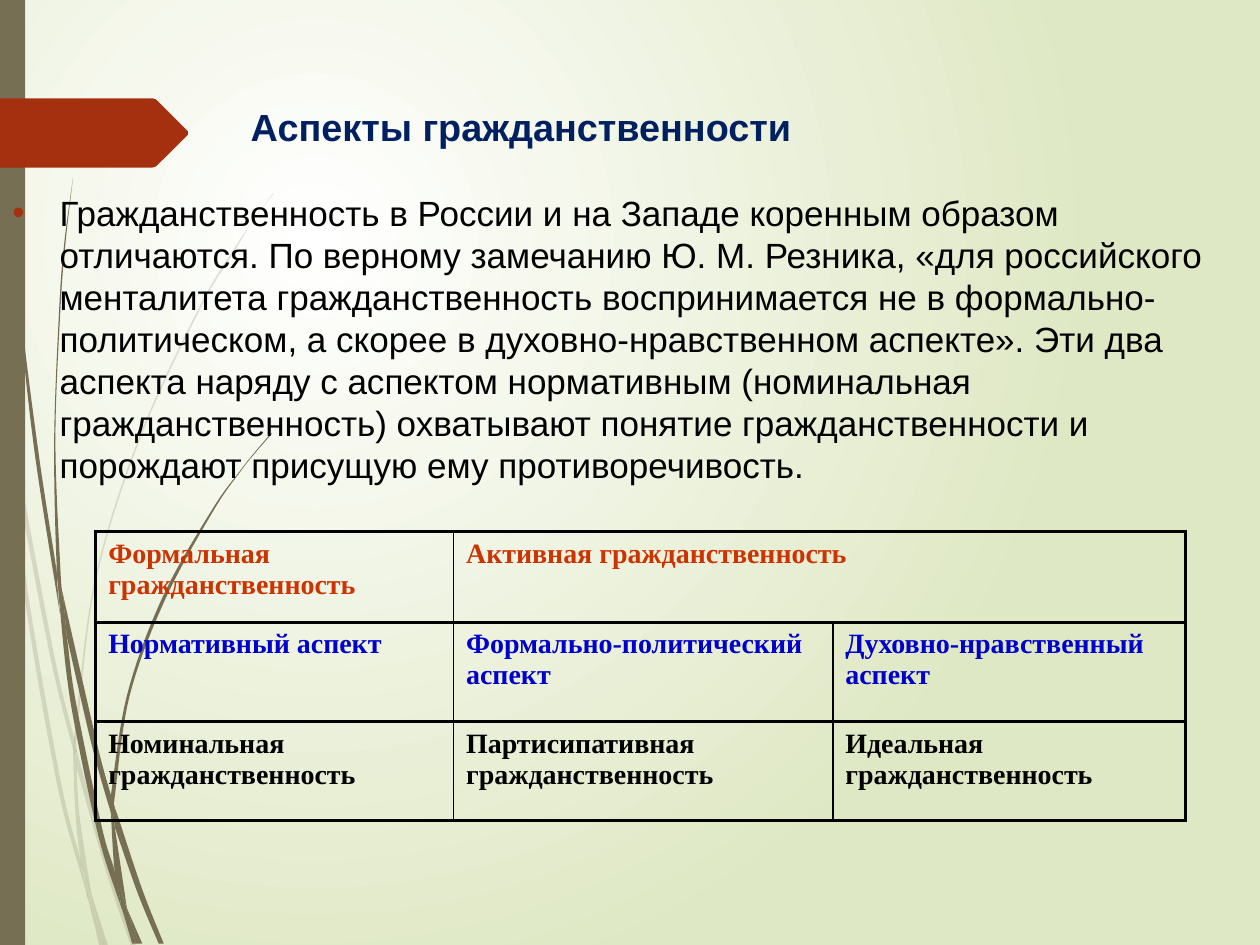
from dataclasses import dataclass

from lxml import etree
from pptx import Presentation, util as u
from pptx.dml.color import RGBColor
from pptx.enum import shapes, text
from pptx.oxml.ns import qn


@dataclass(frozen=True)
class Theme:
    stem: str = "766F54"
    accent: str = "A53010"
    light: str = "FFFFFF"
    shade: str = "DFE8C4"
    title: str = "002060"
    ink: str = "000000"
    red: str = "CC3300"
    blue: str = "0000CC"
    sans: str = "Arial"
    serif: str = "Times New Roman"
    title_size: float = 21.6
    body_size: float = 20
    cell_size: float = 16


THEME = Theme()


def write(frame, words, size, color, font, bold=False, align=None):
    frame.word_wrap = True
    for i, line in enumerate(words.split("\n")):
        paragraph = frame.add_paragraph() if i else frame.paragraphs[0]
        paragraph.alignment = align
        run = paragraph.add_run()
        run.text = line
        run.font.size = u.Pt(size)
        run.font.name = font
        run.font.bold = bold
        run.font.color.rgb = RGBColor.from_string(color)


def smooth(edge):
    """Points of one edge, with two Bezier handles between each pair."""
    padded = [edge[0], *edge, edge[-1]]
    curve = [edge[0]]
    for a, b, c, d in zip(padded, padded[1:], padded[2:], padded[3:]):
        curve.append(tuple(q + (r - p) / 6 for p, q, r in zip(a, b, c)))
        curve.append(tuple(r - (s - q) / 6 for q, r, s in zip(b, c, d)))
        curve.append(c)
    return curve


prs = Presentation()
prs.slide_width, prs.slide_height = u.Inches(10), u.Inches(7.5)
slide = prs.slides.add_slide(prs.slide_layouts[6])

# Background: light spot in the upper left
backdrop = slide.background.fill
backdrop.gradient()
for stop, color, position in zip(backdrop.gradient_stops, (THEME.light, THEME.shade), (0, 1)):
    stop.color.rgb = RGBColor.from_string(color)
    stop.position = position
gradient = slide._element.find(".//" + qn("a:gradFill"))
gradient.remove(gradient.find(qn("a:lin")))
glow = etree.SubElement(gradient, qn("a:path"), path="circle")
etree.SubElement(glow, qn("a:fillToRect"), l="50000", t="50000", r="100000", b="100000")

# Grass blades: each is one edge going out and one coming back
pale_blades = [
    ([(0.08, 3.5), (0.06, 3.22), (0, 2.82)], [(0, 2.99), (0.07, 3.44), (0.08, 3.5)]),
    ([(0.1, 3.45), (0.43, 5.2), (0.59, 5.86)], [(0.59, 5.99), (0.4, 5.22), (0.12, 3.76)]),
    ([(0.61, 5.96), (0.64, 6.07), (0.88, 6.92), (1.08, 7.51)], [(1.04, 7.51), (0.85, 6.94), (0.61, 6.1)]),
    ([(0.73, 7.11), (0.86, 7.51)], [(0.83, 7.51), (0.73, 7.11)]),
    ([(0.08, 3.5), (0.12, 3.76), (0.22, 4.69), (0.48, 6.19), (0.64, 6.83), (0.69, 7.07), (0.7, 7.14)],
     [(0.64, 6.93), (0.45, 6.21), (0.19, 4.7), (0.08, 3.5)]),
    ([(0.58, 5.99), (0.61, 6.08), (0.61, 6.1), (0.63, 6.46), (0.72, 7.06), (0.73, 7.11)],
     [(0.67, 6.92), (0.64, 6.83), (0.6, 6.46), (0.58, 5.99)]),
    ([(0.59, 5.86), (0.59, 5.84), (0.75, 4.61), (1.1, 3.48), (1.58, 2.44), (1.86, 1.97), (2.01, 1.75), (2.17, 1.53)],
     [(2.17, 1.54), (2.01, 1.75), (1.87, 1.98), (1.59, 2.45), (1.11, 3.49), (0.76, 4.62), (0.61, 5.84), (0.61, 5.96)]),
    ([(0.7, 7.14), (0.79, 7.51)], [(0.82, 7.51), (0.7, 7.14)]),
    ([(0.59, 5.86), (0.61, 5.96), (0.61, 6.1)], [(0.61, 6.08), (0.58, 5.99)]),
    ([(0.65, 6.83), (0.67, 6.92), (0.73, 7.11), (0.83, 7.51)], [(0.82, 7.51), (0.7, 7.14), (0.69, 7.07)]),
]
dark_blades = [
    ([(0.02, 0), (0.03, 0.48), (0.05, 1.1), (0.14, 2.33), (0.27, 3.55), (0.46, 4.77), (0.47, 4.81)],
     [(0.45, 4.57), (0.45, 4.53), (0.3, 3.55), (0.15, 2.32), (0.06, 1.09), (0.04, 0.48), (0.03, 0)]),
    ([(0.5, 4.72), (0.77, 5.9), (0.88, 6.31), (0.88, 6.33)], [(0.88, 6.45), (0.73, 5.92), (0.53, 5.05)]),
    ([(0.91, 6.41), (0.94, 6.49), (1.13, 7.06), (1.3, 7.49)], [(1.26, 7.49), (1.09, 7.08), (0.91, 6.56)]),
    ([(0.47, 4.77), (0.53, 5.05), (0.6, 5.56), (0.81, 6.57), (0.91, 6.91), (0.96, 7.17), (0.97, 7.22)],
     [(0.92, 7.08), (0.77, 6.59), (0.56, 5.57), (0.47, 4.77)]),
    ([(0.5, 4.72), (0.48, 4.53), (0.44, 3.49), (0.48, 2.45), (0.52, 1.93), (0.58, 1.41)],
     [(0.58, 1.41), (0.51, 1.93), (0.47, 2.45), (0.43, 3.49), (0.45, 4.49), (0.49, 4.72)]),
    ([(1, 7.19), (1.13, 7.49)], [(1.1, 7.49), (1, 7.19)]),
    ([(0.45, 4.49), (0.49, 4.72), (0.5, 4.72), (0.53, 5.05)], [(0.47, 4.77), (0.45, 4.53)]),
    ([(0.88, 6.31), (1.01, 5.51), (1.29, 4.74), (1.68, 4.05), (1.91, 3.73), (2.03, 3.58), (2.15, 3.44)],
     [(2.16, 3.44), (2.03, 3.59), (1.91, 3.74), (1.69, 4.06), (1.31, 4.76), (1.03, 5.52), (0.91, 6.33), (0.91, 6.41)]),
    ([(0.97, 7.22), (1.08, 7.49)], [(1.05, 7.49), (0.97, 7.22)]),
    ([(0.88, 6.45), (0.9, 6.51), (0.91, 6.56), (1, 7.16), (1, 7.19)], [(0.96, 7.06), (0.91, 6.91), (0.88, 6.45)]),
    ([(0.88, 6.31), (0.91, 6.41), (0.91, 6.56)], [(0.9, 6.51), (0.88, 6.45)]),
    ([(0.91, 6.91), (0.96, 7.06), (1, 7.19), (1.1, 7.49)], [(1.08, 7.49), (0.97, 7.22), (0.96, 7.17)]),
]
tab = [(0, 0.78), (1.21, 0.78), (1.24, 0.79), (1.49, 1.04), (1.49, 1.07), (1.24, 1.32), (1.21, 1.33), (0, 1.33)]
sidebar = [(0, 0), (0.2, 0), (0.2, 7.5), (0, 7.5)]

outlines = [(smooth(out) + [out[-1], back[0]] + smooth(back), THEME.stem, alpha)
            for blades, alpha in ((pale_blades, 20), (dark_blades, 100))
            for out, back in blades]
outlines += [(sidebar, THEME.stem, 100), (tab, THEME.accent, 100)]

for outline, color, alpha in outlines:
    if outline is sidebar:
        part = slide.shapes.add_shape(shapes.MSO_SHAPE.RECTANGLE, 0, 0, u.Inches(0.2), prs.slide_height)
    else:
        points = [(u.Inches(x), u.Inches(y)) for x, y in outline]
        builder = slide.shapes.build_freeform(*points[0])
        builder.add_line_segments(points[1:])
        part = builder.convert_to_shape()
    if outline not in (sidebar, tab):
        # Every three points after the first make one Bezier segment
        lines = part._element.findall(".//" + qn("a:lnTo"))
        for i in range(0, len(points) - 1, 3):
            curve = etree.Element(qn("a:cubicBezTo"))
            lines[i].addprevious(curve)
            for line in lines[i:i + 3]:
                curve.append(line[0])
        for line in lines:
            line.getparent().remove(line)
    part.shadow.inherit = False
    part.line.fill.background()
    part.fill.solid()
    part.fill.fore_color.rgb = RGBColor.from_string(color)
    if alpha < 100:
        tint = part._element.spPr.find(".//" + qn("a:srgbClr"))
        etree.SubElement(tint, qn("a:alpha"), val=str(alpha * 1000))

# Heading and paragraph
heading = slide.shapes.add_textbox(u.Inches(1.69), u.Inches(0.77), u.Inches(4.89), u.Inches(0.47)).text_frame
heading.vertical_anchor = text.MSO_ANCHOR.MIDDLE
write(heading, "Аспекты гражданственности", THEME.title_size, THEME.title, THEME.sans,
      bold=True, align=text.PP_ALIGN.CENTER)

thesis = slide.shapes.add_textbox(0, u.Inches(1.47), u.Inches(9.8), u.Inches(2.91)).text_frame
write(thesis,
      "Гражданственность в России и на Западе коренным образом отличаются. "
      "По верному замечанию Ю. М. Резника, «для российского менталитета "
      "гражданственность воспринимается не в формально-политическом, а скорее "
      "в духовно-нравственном аспекте». Эти два аспекта наряду с аспектом "
      "нормативным (номинальная гражданственность) охватывают понятие "
      "гражданственности и порождают присущую ему противоречивость.",
      THEME.body_size, THEME.ink, THEME.sans)
thesis.paragraphs[0].space_before = u.Pt(10)
hang = u.Inches(3 / 8)
bullet = thesis.paragraphs[0]._p.get_or_add_pPr()
bullet.set("marL", str(hang))
bullet.set("indent", str(-hang))
bullet_color = etree.SubElement(bullet, qn("a:buClr"))
etree.SubElement(bullet_color, qn("a:srgbClr"), val=THEME.accent)
etree.SubElement(bullet, qn("a:buFont"), typeface=THEME.sans)
etree.SubElement(bullet, qn("a:buChar"), char="•")

# Table of aspects
aspects = [
    (THEME.red, 0.72, ["Формальная\nгражданственность", "Активная гражданственность", ""]),
    (THEME.blue, 0.79, ["Нормативный аспект", "Формально-политический аспект", "Духовно-нравственный аспект"]),
    (THEME.ink, 0.78, ["Номинальная гражданственность", "Партисипативная гражданственность",
                       "Идеальная гражданственность"]),
]
widths = [2.84, 3.01, 2.8]
grid = slide.shapes.add_table(len(aspects), len(widths), u.Inches(0.76), u.Inches(4.22),
                              u.Inches(sum(widths)), u.Inches(2.29)).table
grid.first_row = grid.horz_banding = False
for column, width in zip(grid.columns, widths):
    column.width = u.Inches(width)
grid.cell(0, 1).merge(grid.cell(0, 2))

for r, (color, height, labels) in enumerate(aspects):
    grid.rows[r].height = u.Inches(height)
    for c, label in enumerate(labels):
        cell = grid.cell(r, c)
        if label:
            write(cell.text_frame, label, THEME.cell_size, color, THEME.serif, bold=True)
        right_edge = c == len(widths) - 1 or (r, c) == (0, 1)
        borders = {"L": 1 if c else 2, "R": 2 if right_edge else 1, "T": 2, "B": 2}
        for side, weight in borders.items():
            border = etree.SubElement(cell._tc.get_or_add_tcPr(), qn("a:ln" + side), w=str(u.Pt(weight)))
            ink = etree.SubElement(border, qn("a:solidFill"))
            etree.SubElement(ink, qn("a:srgbClr"), val=THEME.ink)
        cell.fill.background()

prs.save("out.pptx")
